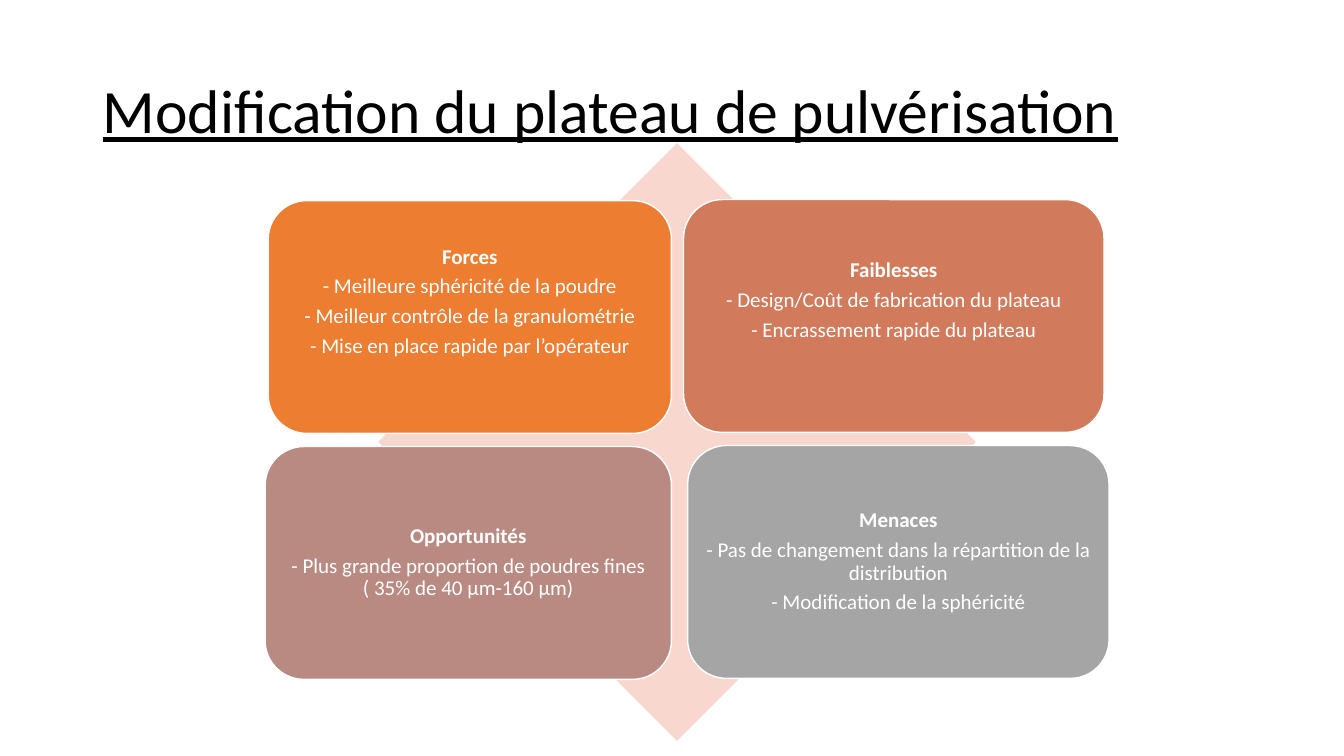
from dataclasses import dataclass

from pptx import Presentation, util as u
from pptx.dml import color
from pptx.enum import shapes, text

PX = 9144
FONT = "Calibri"
WHITE = "FFFFFF"
INSET = 6


@dataclass(frozen=True)
class Quadrant:
    left: int
    top: int
    width: int
    fill: str
    heading: str
    points: tuple[str, ...]
    lift: int = 0
    height: int = 231


QUADRANTS = (
    Quadrant(266, 199, 400, "ED7D31", "Forces", (
        "- Meilleure sphéricité de la poudre",
        "- Meilleur contrôle de la granulométrie",
        "- Mise en place rapide par l’opérateur",
    ), lift=30),
    Quadrant(678, 198, 417, "D17B5C", "Faiblesses", (
        "- Design/Coût de fabrication du plateau",
        "- Encrassement rapide du plateau",
    ), lift=30),
    Quadrant(263, 443, 403, "B98A82", "Opportunités", (
        "- Plus grande proportion de poudres fines ( 35% de 40 µm-160 µm)",
    )),
    Quadrant(682, 442, 418, "A5A5A5", "Menaces", (
        "- Pas de changement dans la répartition de la distribution",
        "- Modification de la sphéricité",
    )),
)


def px(count: int) -> u.Emu:
    return u.Emu(count * PX)


def rgb(value: str) -> color.RGBColor:
    return color.RGBColor.from_string(value)


def style(font, size: int, colour: str, bold: bool = False) -> None:
    font.name = FONT
    font.size = u.Pt(size)
    font.bold = bold
    font.color.rgb = rgb(colour)


def add_title(page, wording: str) -> None:
    title = page.shapes.title
    title.left, title.top, title.width, title.height = map(px, (92, 40, 1150, 145))
    frame = title.text_frame
    frame.text = wording
    frame.vertical_anchor = text.MSO_ANCHOR.MIDDLE
    para = frame.paragraphs[0]
    para.alignment = text.PP_ALIGN.LEFT
    para.line_spacing = 0.9
    span = para.runs[0]
    style(span.font, 44, "000000")
    span.font.underline = True


def add_block(page, kind, left: int, top: int, width: int, height: int, fill: str):
    box = page.shapes.add_shape(kind, px(left), px(top), px(width), px(height))
    box.shadow.inherit = False
    box.fill.solid()
    box.fill.fore_color.rgb = rgb(fill)
    return box


def add_quadrant(page, item: Quadrant) -> None:
    box = add_block(page, shapes.MSO_SHAPE.ROUNDED_RECTANGLE,
                    item.left, item.top, item.width, item.height, item.fill)
    box.line.color.rgb = rgb(WHITE)
    box.line.width = u.Pt(1)
    frame = box.text_frame
    frame.word_wrap = True
    frame.vertical_anchor = text.MSO_ANCHOR.MIDDLE
    frame.margin_left = frame.margin_right = frame.margin_top = px(INSET)
    frame.margin_bottom = px(INSET + item.lift)
    frame.text = "\n".join((item.heading, *item.points))
    for index, para in enumerate(frame.paragraphs):
        para.alignment = text.PP_ALIGN.CENTER
        para.line_spacing = 0.9
        para.space_after = u.Pt(5)
        style(para.runs[0].font, 15, WHITE, bold=index == 0)


def main() -> None:
    deck = Presentation()
    deck.slide_width, deck.slide_height = px(1333), px(750)
    page = deck.slides.add_slide(deck.slide_layouts[5])
    add_title(page, "Modification du plateau de pulvérisation")
    diamond = add_block(page, shapes.MSO_SHAPE.DIAMOND, 375, 142, 593, 593, "F8D7CE")
    diamond.line.fill.background()
    for item in QUADRANTS:
        add_quadrant(page, item)
    deck.save("out.pptx")


if __name__ == "__main__":
    main()
